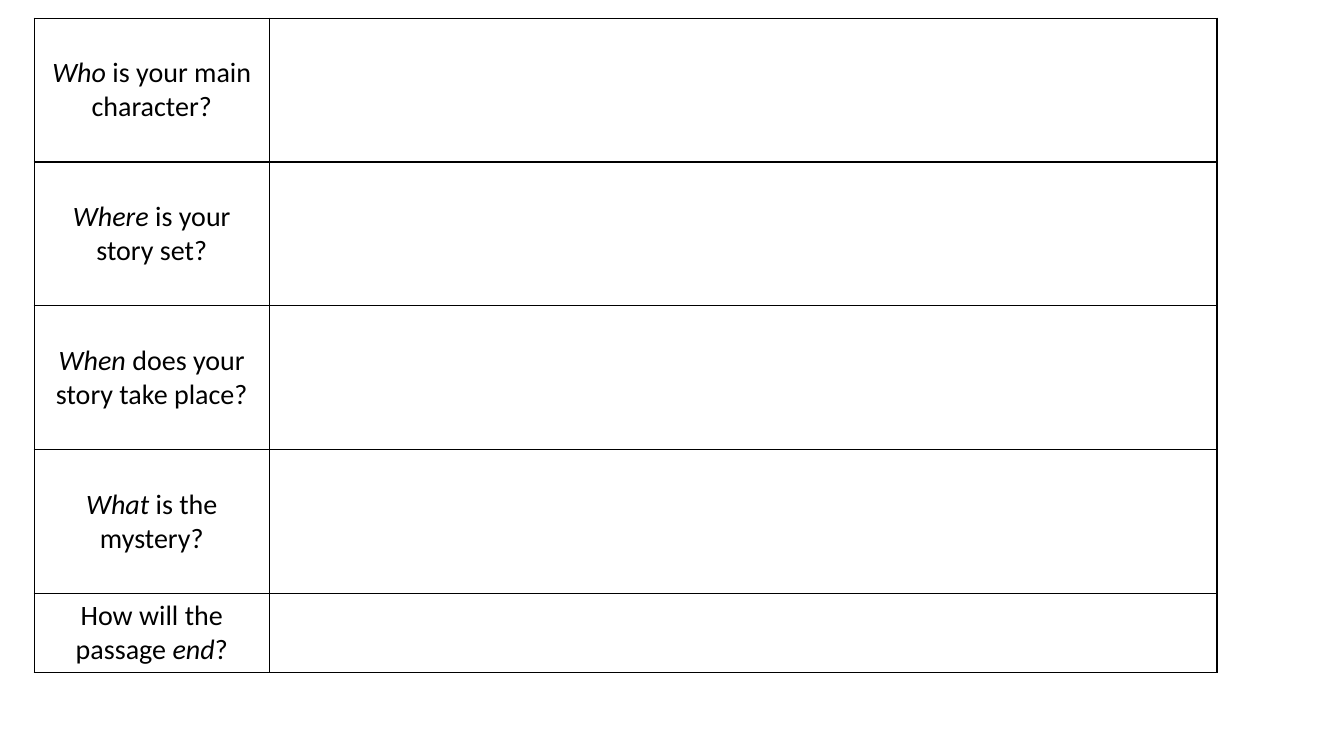
"""Builds a story planning slide with one question per table row."""
from dataclasses import dataclass

from lxml import etree
from pptx import Presentation
from pptx.dml.color import RGBColor
from pptx.enum import text
from pptx.oxml import ns
from pptx.util import Inches, Pt


@dataclass(frozen=True)
class Theme:
    """Colours, font and sizes of the slide."""
    ink: str = "000000"
    font: str = "Calibri"
    question_size: int = 20
    rule_width: int = 1


THEME = Theme()

QUESTIONS = [
    [("Who ", True), ("is your main character?", False)],
    [("Where ", True), ("is your story set?", False)],
    [("When ", True), ("does your story take place?", False)],
    [("What ", True), ("is the mystery?", False)],
    [("How will the passage ", False), ("end", True), ("?", False)],
]


def rule_cell(cell):
    """Draw all four borders of a cell and leave it unfilled."""
    properties = cell._tc.get_or_add_tcPr()
    for side in ("lnL", "lnR", "lnT", "lnB"):
        border = etree.SubElement(properties, ns.qn(f"a:{side}"), w=str(Pt(THEME.rule_width)))
        ink = etree.SubElement(border, ns.qn("a:solidFill"))
        etree.SubElement(ink, ns.qn("a:srgbClr"), val=THEME.ink)
    cell.fill.background()


def write_question(cell, phrases):
    """Write a centred question from (wording, italic) phrases."""
    cell.vertical_anchor = text.MSO_ANCHOR.MIDDLE
    question = cell.text_frame.paragraphs[0]
    question.alignment = text.PP_ALIGN.CENTER
    for wording, italic in phrases:
        phrase = question.add_run()
        phrase.text = wording
        phrase.font.name = THEME.font
        phrase.font.size = Pt(THEME.question_size)
        phrase.font.italic = italic
        phrase.font.color.rgb = RGBColor.from_string(THEME.ink)


def add_planner(slide, left, top, width, height, question_width=2.33, last_height=0.76):
    """Place the question and answer table in the given box, in inches."""
    planner = slide.shapes.add_table(
        len(QUESTIONS), 2, Inches(left), Inches(top), Inches(width), Inches(height)
    ).table
    planner.first_row = False
    planner.horz_banding = False
    planner.columns[0].width = Inches(question_width)
    planner.columns[1].width = Inches(width - question_width)
    full_height = (height - last_height) / (len(QUESTIONS) - 1)
    for row, phrases in zip(planner.rows, QUESTIONS):
        row.height = Inches(full_height)
        for cell in row.cells:
            rule_cell(cell)
        write_question(row.cells[0], phrases)
    planner.rows[len(QUESTIONS) - 1].height = Inches(last_height)


def main():
    """Build and save the presentation."""
    deck = Presentation()
    deck.slide_width, deck.slide_height = Inches(13.33), Inches(7.5)
    slide = deck.slides.add_slide(deck.slide_layouts[6])
    add_planner(slide, 0.34, 0.18, 11.73, 6.47)
    deck.save("out.pptx")


if __name__ == "__main__":
    main()
